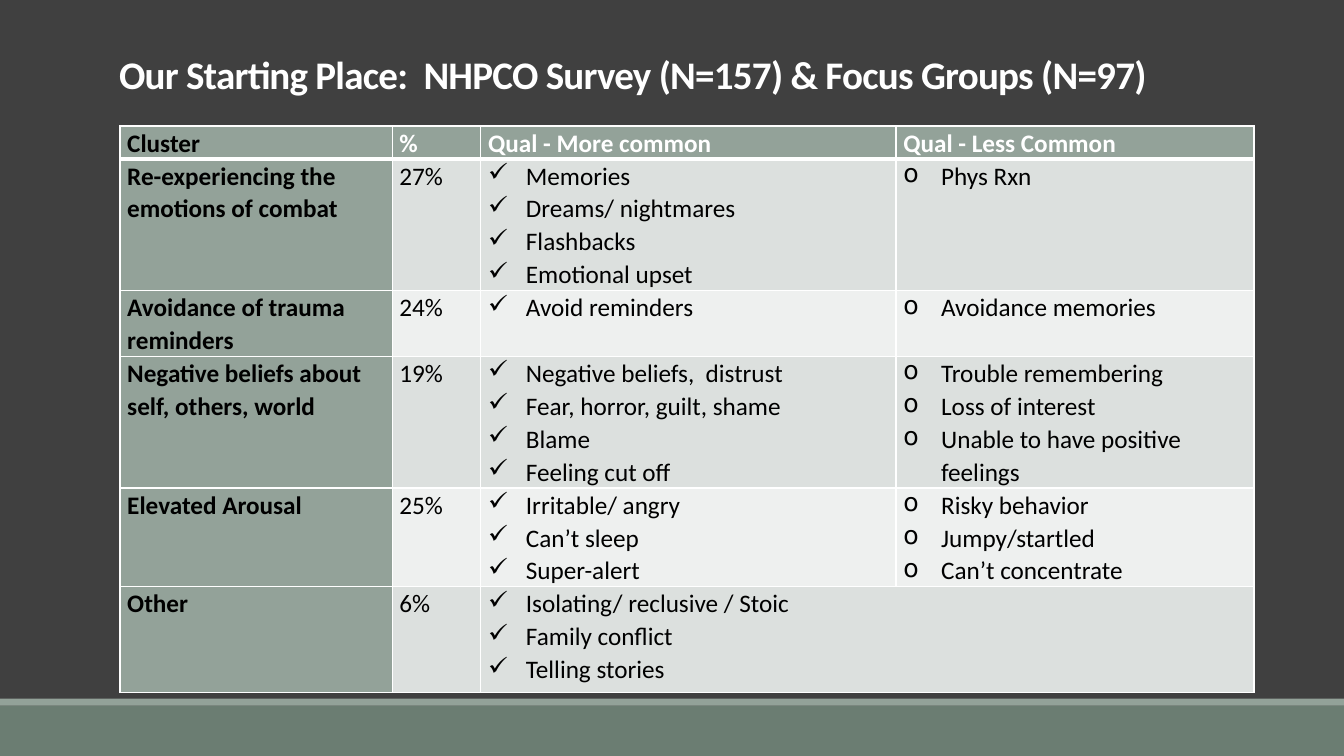
from lxml import etree
from pptx import Presentation
from pptx.dml.color import RGBColor
from pptx.enum.shapes import MSO_SHAPE
from pptx.enum.text import MSO_ANCHOR, MSO_AUTO_SIZE, PP_ALIGN
from pptx.oxml.ns import qn
from pptx.util import Pt

RECT = MSO_SHAPE.RECTANGLE
TOP = MSO_ANCHOR.TOP
LEFT = PP_ALIGN.LEFT
NO_FIT = MSO_AUTO_SIZE.NONE

DARK = RGBColor(0x40, 0x40, 0x40)
MOSS = RGBColor(0x6B, 0x7D, 0x72)
SAGE = RGBColor(0x93, 0xA2, 0x99)
GRAY = RGBColor(0xDC, 0xE0, 0xDE)
PALE = RGBColor(0xEE, 0xF0, 0xEF)
WHITE = RGBColor(0xFF, 0xFF, 0xFF)
BLACK = RGBColor(0, 0, 0)

HEAD = ["Cluster", "%", "Qual - More common", "Qual - Less Common"]
ROWS = [
    ("Re-experiencing the emotions of combat", "27%",
     ["Memories", "Dreams/ nightmares", "Flashbacks", "Emotional upset"],
     ["Phys Rxn"]),
    ("Avoidance of trauma reminders", "24%",
     ["Avoid reminders"], ["Avoidance memories"]),
    ("Negative beliefs about self, others, world", "19%",
     ["Negative beliefs,  distrust", "Fear, horror, guilt, shame",
      "Blame", "Feeling cut off"],
     ["Trouble remembering", "Loss of interest",
      "Unable to have positive feelings"]),
    ("Elevated Arousal", "25%",
     ["Irritable/ angry", "Can’t sleep", "Super-alert"],
     ["Risky behavior", "Jumpy/startled", "Can’t concentrate"]),
    ("Other", "6%",
     ["Isolating/ reclusive / Stoic", "Family conflict", "Telling stories"],
     []),
]
WIDTHS = [194.4, 63.4, 296.6, 255.6]
LINE = 23.5
HEIGHTS = [LINE * n for n in (1, 4, 2, 4, 3)] + [75.5]
MARKS = {2: "✓", 3: "o"}


class Deck:
    font = "Calibri"
    size = 18
    inset = 5.2
    indent = 27

    def __init__(self, pres):
        self.slide = pres.slides.add_slide(pres.slide_layouts[5])
        fill = self.slide.background.fill
        fill.solid()
        fill.fore_color.rgb = DARK

    def style(self, para, size, color, bold):
        para.alignment = LEFT
        font = para.font
        font.name, font.size, font.bold = self.font, Pt(size), bold
        font.color.rgb = color
        for run in para.runs:
            font = run.font
            font.name, font.size, font.bold = self.font, Pt(size), bold
            font.color.rgb = color

    def band(self, top, height, color):
        bar = self.slide.shapes.add_shape(RECT, 0, Pt(top), Pt(960), Pt(height))
        bar.shadow.inherit = False
        bar.fill.solid()
        bar.fill.fore_color.rgb = color
        bar.line.fill.background()

    def title(self, text, left, top, width, height):
        box = self.slide.shapes.title
        box.left, box.top = Pt(left), Pt(top)
        box.width, box.height = Pt(width), Pt(height)
        frame = box.text_frame
        frame.text = text
        frame.word_wrap = True
        frame.auto_size = NO_FIT
        frame.vertical_anchor = TOP
        frame.margin_top = frame.margin_bottom = 0
        para = frame.paragraphs[0]
        para.line_spacing = 0.85
        self.style(para, 27.9, WHITE, True)
        para.runs[0].font._element.set("spc", "-50")

    def border(self, cell, thick):
        """Draw white cell edges, with the bottom one of the given width."""
        props = cell._tc.get_or_add_tcPr()
        for side in ("lnL", "lnR", "lnT", "lnB"):
            width = thick if side == "lnB" else 1
            edge = etree.SubElement(props, qn("a:" + side), w=str(Pt(width)))
            fill = etree.SubElement(edge, qn("a:solidFill"))
            etree.SubElement(fill, qn("a:srgbClr"), val=str(WHITE))

    def bullet(self, para, mark):
        props = para._p.get_or_add_pPr()
        props.set("marL", str(Pt(self.indent)))
        props.set("indent", str(-Pt(self.indent)))
        etree.SubElement(props, qn("a:buChar"), char=mark)

    def cell(self, cell, lines, back, color=BLACK, bold=False, mark=None, thick=1):
        self.border(cell, thick)
        cell.fill.solid()
        cell.fill.fore_color.rgb = back
        cell.margin_left = cell.margin_right = Pt(self.inset)
        cell.margin_top = cell.margin_bottom = 0
        cell.vertical_anchor = TOP
        cell.text_frame.text = "\n".join(lines)
        for para in cell.text_frame.paragraphs:
            para.line_spacing = 1.07
            if mark and lines:
                self.bullet(para, mark)
            self.style(para, self.size, color, bold)

    def table(self, left, top):
        frame = self.slide.shapes.add_table(
            len(HEIGHTS), len(WIDTHS), Pt(left), Pt(top),
            Pt(sum(WIDTHS)), Pt(sum(HEIGHTS)))
        grid = frame.table
        grid.horz_banding = False
        grid.first_col = True
        for col, width in zip(grid.columns, WIDTHS):
            col.width = Pt(width)
        for row, height in zip(grid.rows, HEIGHTS):
            row.height = Pt(height)
        for c, text in enumerate(HEAD):
            self.cell(grid.cell(0, c), [text], SAGE,
                      WHITE if c else BLACK, True, thick=3)
        for r, (name, share, more, less) in enumerate(ROWS, 1):
            shade = GRAY if r % 2 else PALE
            for c, lines in enumerate(([name], [share], more, less)):
                self.cell(grid.cell(r, c), lines, shade if c else SAGE,
                          bold=c == 0, mark=MARKS.get(c))
            if not less:
                grid.cell(r, 2).merge(grid.cell(r, 3))


def main():
    pres = Presentation()
    pres.slide_width, pres.slide_height = Pt(960), Pt(540)
    deck = Deck(pres)
    deck.band(504, 36, MOSS)
    deck.band(499, 5, SAGE)
    deck.title("Our Starting Place:  NHPCO Survey (N=157) & Focus Groups (N=97)",
               77.8, 41, 868, 40)
    deck.table(85.7, 90)
    pres.save("out.pptx")


if __name__ == "__main__":
    main()
